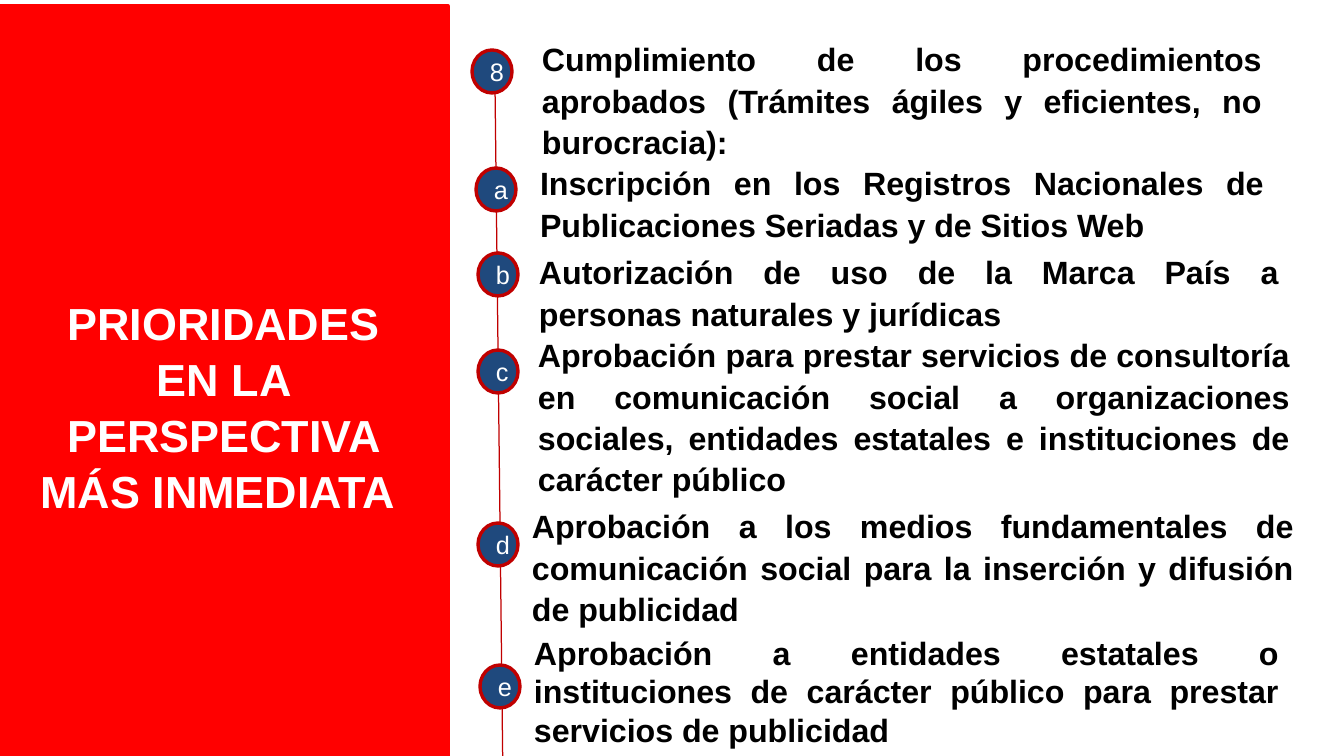
from lxml import etree
from pptx import Presentation
from pptx import util as u
from pptx.dml.color import RGBColor
from pptx.enum import shapes, text
from pptx.oxml.ns import qn

# Content
TITLE = "PRIORIDADES EN LA PERSPECTIVA MÁS INMEDIATA "
# (marker, marker left and top, text box left, top, width and height, line spacing, text)
ITEMS = [
    ("8", (472, 50), (530, 31, 744, 134), 1.07,
     "Cumplimiento de los procedimientos aprobados (Trámites ágiles y eficientes, no burocracia):"),
    ("a", (476, 168), (528, 155, 748, 96), 1.07,
     "Inscripción en los Registros Nacionales de Publicaciones Seriadas y de Sitios Web"),
    ("b", (478, 253), (527, 244, 764, 96), 1.07,
     "Autorización de uso de la Marca País a personas naturales y jurídicas"),
    ("c", (478, 350), (526, 327, 776, 176), 1.07,
     "Aprobación para prestar servicios de consultoría en comunicación social a "
     "organizaciones sociales, entidades estatales e instituciones de carácter público"),
    ("d", (478, 523), (520, 498, 786, 134), 1.07,
     "Aprobación a los medios fundamentales de comunicación social para la inserción "
     "y difusión de publicidad"),
    ("e", (480, 665), (522, 627, 769, 129), 1.0,
     "Aprobación a entidades estatales o instituciones de carácter público para "
     "prestar servicios de publicidad"),
]
COLORS = {"panel": "FF0000", "rail": "C00000", "marker": "1F497D",
          "light": "FFFFFF", "dark": "000000"}
FONT = "Arial"
PX = 914400 / 122
MARKER_W, MARKER_H = 40, 43


def px(*values):
    return [u.Emu(round(v * PX)) for v in values]


def rgb(name):
    return RGBColor.from_string(COLORS[name])


def write(shape, words, size, color, align, bold=False, spacing=None, after=0):
    tf = shape.text_frame
    tf.word_wrap = True
    tf.text = words
    p = tf.paragraphs[0]
    p.alignment = align
    p.space_after = u.Pt(after)
    if spacing:
        p.line_spacing = spacing
    font = p.runs[0].font
    font.name, font.size, font.bold = FONT, u.Pt(size), bold
    font.color.rgb = rgb(color)


def add_filled(kind, box, fill, line):
    sp = s.shapes.add_shape(kind, *px(*box))
    sp.shadow.inherit = False
    sp.fill.solid()
    sp.fill.fore_color.rgb = rgb(fill)
    sp.line.color.rgb = rgb(line)
    sp.line.width = u.Pt(2)
    return sp


prs = Presentation()
prs.slide_width, prs.slide_height = px(1344, 756)
s = prs.slides.add_slide(prs.slide_layouts[6])

# Title panel
add_filled(shapes.MSO_SHAPE.RECTANGLE, (0, 6, 448, 756), "panel", "panel")
title = s.shapes.add_textbox(*px(20, 288, 407, 229))
write(title, TITLE, 26.5, "light", text.PP_ALIGN.CENTER, bold=True, spacing=1.04)

# Rail behind the markers
rail = s.shapes.add_connector(shapes.MSO_CONNECTOR.STRAIGHT, *px(495, 82, 503, 783))
rail.line.color.rgb = rgb("rail")
rail.line.width = u.Pt(0.75)
etree.SubElement(rail._element.spPr, qn("a:effectLst"))

# Markers and their texts
for letter, corner, box, spacing, words in ITEMS:
    marker = add_filled(shapes.MSO_SHAPE.OVAL, (*corner, MARKER_W, MARKER_H), "marker", "rail")
    marker.text_frame.vertical_anchor = text.MSO_ANCHOR.MIDDLE
    write(marker, letter, 14.9, "light", text.PP_ALIGN.CENTER)
    write(s.shapes.add_textbox(*px(*box)), words, 19, "dark", text.PP_ALIGN.JUSTIFY,
          bold=True, spacing=spacing, after=8 if spacing > 1 else 0)

prs.save("out.pptx")
